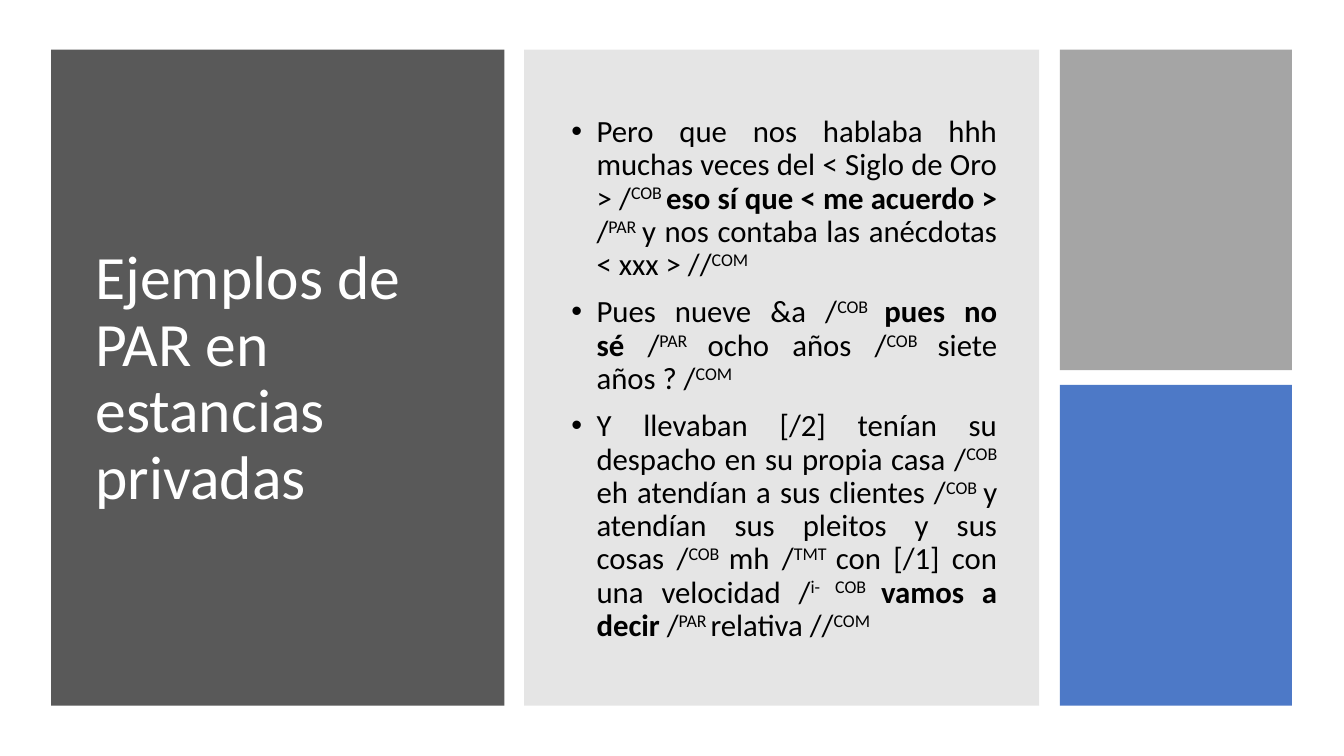
from typing import NamedTuple

from lxml import etree
from pptx import Presentation
from pptx.dml.color import RGBColor
from pptx.enum import shapes, text
from pptx.oxml.ns import qn
from pptx.util import Cm, Pt

COLORS = {
    "dark": "595959",
    "panel": "808080",
    "gray": "A5A5A5",
    "blue": "4472C4",
    "white": "FFFFFF",
    "black": "000000",
}
FONT = "Calibri"


class Block(NamedTuple):
    left: float
    top: float
    width: float
    height: float
    color: str
    alpha: int = 100


class Span(NamedTuple):
    text: str
    bold: bool = False
    raised: bool = False


def tag(label: str) -> Span:
    return Span(label + " ", raised=True)


def strong(words: str) -> Span:
    return Span(words + " ", bold=True)


COB, PAR, COM = tag("COB"), tag("PAR"), tag("COM")

# Content
TITLE = [Span("Ejemplos de PAR en estancias privadas")]
EXAMPLES = [
    [Span("Pero que nos hablaba hhh muchas veces del < Siglo de Oro > /"), COB,
     strong("eso sí que < me acuerdo >"), Span("/"), PAR,
     Span("y nos contaba las anécdotas < xxx > //"), COM],
    [Span("Pues nueve &a /"), COB, strong("pues no sé"), Span("/"), PAR,
     Span("ocho años /"), COB, Span("siete años ? /"), COM],
    [Span("Y llevaban [/2] tenían su despacho en su propia casa /"), COB,
     Span("eh atendían a sus clientes /"), COB,
     Span("y atendían sus pleitos y sus cosas /"), COB,
     Span("mh /"), tag("TMT"), Span("con [/1] con una velocidad /"), tag("i- COB"),
     strong("vamos a decir"), Span("/"), PAR, Span("relativa //"), COM],
]

# Layout in centimetres
TOP, FULL_H, TILE_H = 1.25, 16.53, 8.08
TILE_LEFT, TILE_W = 26.71, 5.85
TEXT_TOP, TEXT_H = 2.11, 14.91
BLOCKS = [
    Block(1.29, TOP, 11.42, FULL_H, "dark"),
    Block(13.21, TOP, 12.98, FULL_H, "panel", 20),
    Block(TILE_LEFT, TOP, TILE_W, TILE_H, "gray"),
    Block(TILE_LEFT, TOP + FULL_H - TILE_H, TILE_W, TILE_H, "blue", 95),
]


def add_block(slide, block: Block) -> None:
    box = (Cm(v) for v in block[:4])
    s = slide.shapes.add_shape(shapes.MSO_SHAPE.RECTANGLE, *box)
    s.shadow.inherit = False
    s.line.fill.background()
    s.fill.solid()
    s.fill.fore_color.rgb = RGBColor.from_string(COLORS[block.color])
    if block.alpha < 100:
        clr = s.fill._xPr.find(qn("a:solidFill"))[0]
        etree.SubElement(clr, qn("a:alpha"), val=str(block.alpha * 1000))


def add_bullet(p) -> None:
    pPr = p._p.get_or_add_pPr()
    indent = Cm(0.635)
    pPr.set("marL", str(indent))
    pPr.set("indent", str(-indent))
    etree.SubElement(pPr, qn("a:buFont"), typeface="Arial")
    etree.SubElement(pPr, qn("a:buChar"), char="•")


def add_text(slide, left: float, width: float, paragraphs: list[list[Span]],
             size: int, color: str, para_format: dict, bullets: bool = False) -> None:
    s = slide.shapes.add_textbox(Cm(left), Cm(TEXT_TOP), Cm(width), Cm(TEXT_H))
    tf = s.text_frame
    tf.word_wrap = True
    tf.vertical_anchor = text.MSO_ANCHOR.MIDDLE
    for i, spans in enumerate(paragraphs):
        p = tf.add_paragraph() if i else tf.paragraphs[0]
        for name, value in para_format.items():
            setattr(p, name, value)
        if bullets:
            add_bullet(p)
        for span in spans:
            r = p.add_run()
            r.text = span.text
            run_format = {"name": FONT, "size": Pt(size), "bold": span.bold}
            for name, value in run_format.items():
                setattr(r.font, name, value)
            r.font.color.rgb = RGBColor.from_string(COLORS[color])
            if span.raised:
                r.font._element.set("baseline", "30000")


def main() -> None:
    prs = Presentation()
    prs.slide_width, prs.slide_height = Cm(33.87), Cm(19.05)
    slide = prs.slides.add_slide(prs.slide_layouts[6])

    # Coloured panels
    for block in BLOCKS:
        add_block(slide, block)

    # Title and examples
    add_text(slide, 2.16, 9.75, [TITLE], 44, "white",
             {"alignment": text.PP_ALIGN.LEFT, "line_spacing": 0.9})
    add_text(slide, 14.15, 11.23, EXAMPLES, 22, "black",
             {"alignment": text.PP_ALIGN.JUSTIFY, "line_spacing": 0.9,
              "space_before": Pt(10)}, bullets=True)

    prs.save("out.pptx")


if __name__ == "__main__":
    main()
